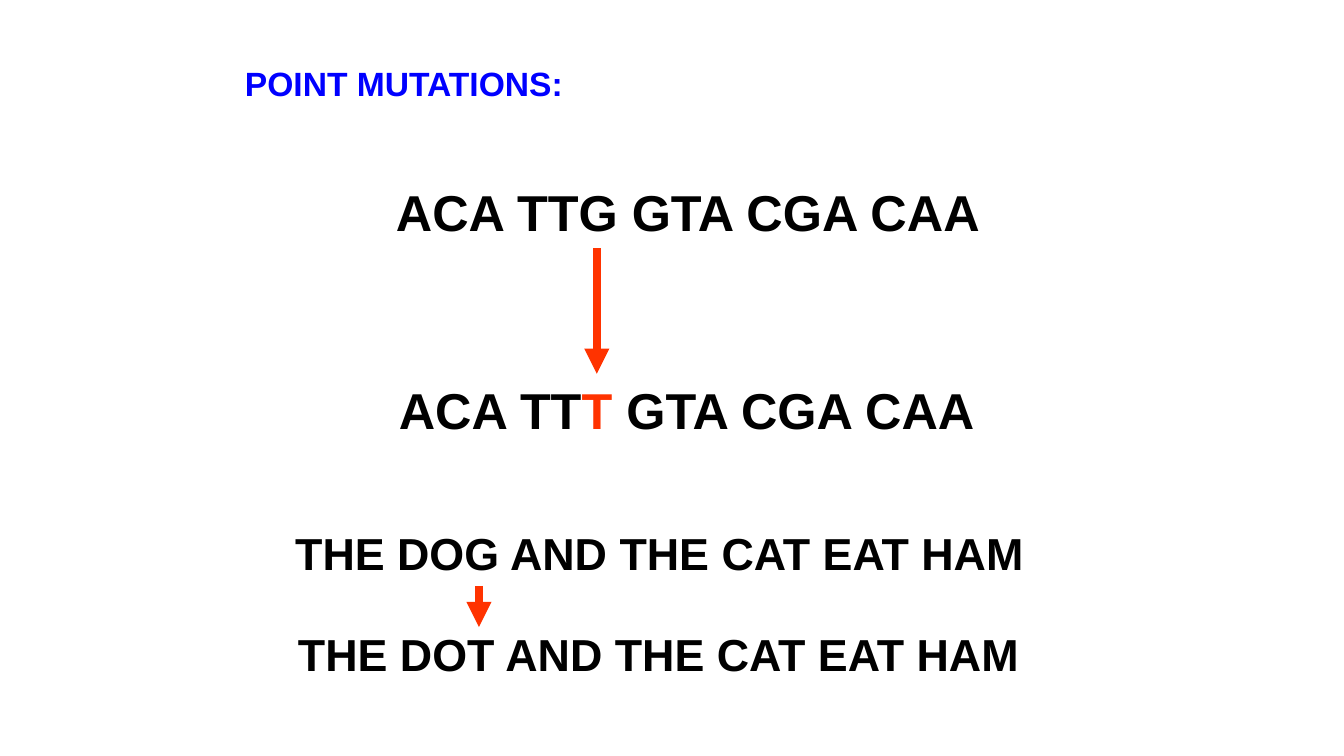
import pptx
import pptx.dml.color
import pptx.enum.shapes
import pptx.enum.text
import pptx.oxml
import pptx.oxml.ns
import pptx.util
from pptx.util import Cm

COLORS = {"title": "0000FF", "text": "000000", "mutation": "FF3300"}


def write_line(s, box, size, runs):
    """Place a one-line text shape and fill it with (text, colour name) runs."""
    s.left, s.top, s.width, s.height = [Cm(v) for v in box]
    tf = s.text_frame
    tf.word_wrap = False
    tf.auto_size = pptx.enum.text.MSO_AUTO_SIZE.SHAPE_TO_FIT_TEXT
    tf.vertical_anchor = pptx.enum.text.MSO_ANCHOR.TOP
    p = tf.paragraphs[0]
    p.alignment = pptx.enum.text.PP_ALIGN.LEFT
    p.line_spacing = 1.0
    for text, color in runs:
        r = p.add_run()
        r.text = text
        r.font.name = "Arial"
        r.font.size = pptx.util.Pt(size)
        r.font.bold = True
        r.font.color.rgb = pptx.dml.color.RGBColor.from_string(COLORS[color])


prs = pptx.Presentation()
prs.slide_width, prs.slide_height = Cm(33.87), Cm(19.05)
slide = prs.slides.add_slide(prs.slide_layouts[5])

write_line(slide.shapes.title, (5.92, 1.47, 8.64, 1.28), 24,
           [("POINT MUTATIONS:", "title")])

# Sequences before and after each mutation
lines = [
    ((9.73, 4.45, 15.37, 1.8), 36, [("ACA TTG GTA CGA CAA", "text")]),
    ((9.8, 9.42, 15.16, 1.8), 36,
     [("ACA TT", "text"), ("T", "mutation"), (" GTA CGA CAA", "text")]),
    ((7.19, 13.13, 19.05, 1.62), 32, [("THE DOG AND THE CAT EAT HAM", "text")]),
    ((7.26, 15.67, 18.85, 1.62), 32, [("THE DOT AND THE CAT EAT HAM", "text")]),
]
for box, size, runs in lines:
    write_line(slide.shapes.add_textbox(0, 0, 0, 0), box, size, runs)

# Arrows from the changed letter to its replacement
for x, top, bottom in [(15.04, 6.25, 9.42), (12.07, 14.76, 15.8)]:
    arrow = slide.shapes.add_connector(
        pptx.enum.shapes.MSO_CONNECTOR.STRAIGHT, Cm(x), Cm(top), Cm(x), Cm(bottom))
    arrow.line.color.rgb = pptx.dml.color.RGBColor.from_string(COLORS["mutation"])
    arrow.line.width = pptx.util.Pt(6)
    ln = arrow.line._get_or_add_ln()
    ln.append(pptx.oxml.parse_xml(
        f'<a:tailEnd {pptx.oxml.ns.nsdecls("a")} type="triangle"/>'))
    ln.addnext(pptx.oxml.parse_xml(f'<a:effectLst {pptx.oxml.ns.nsdecls("a")}/>'))

prs.save("out.pptx")
